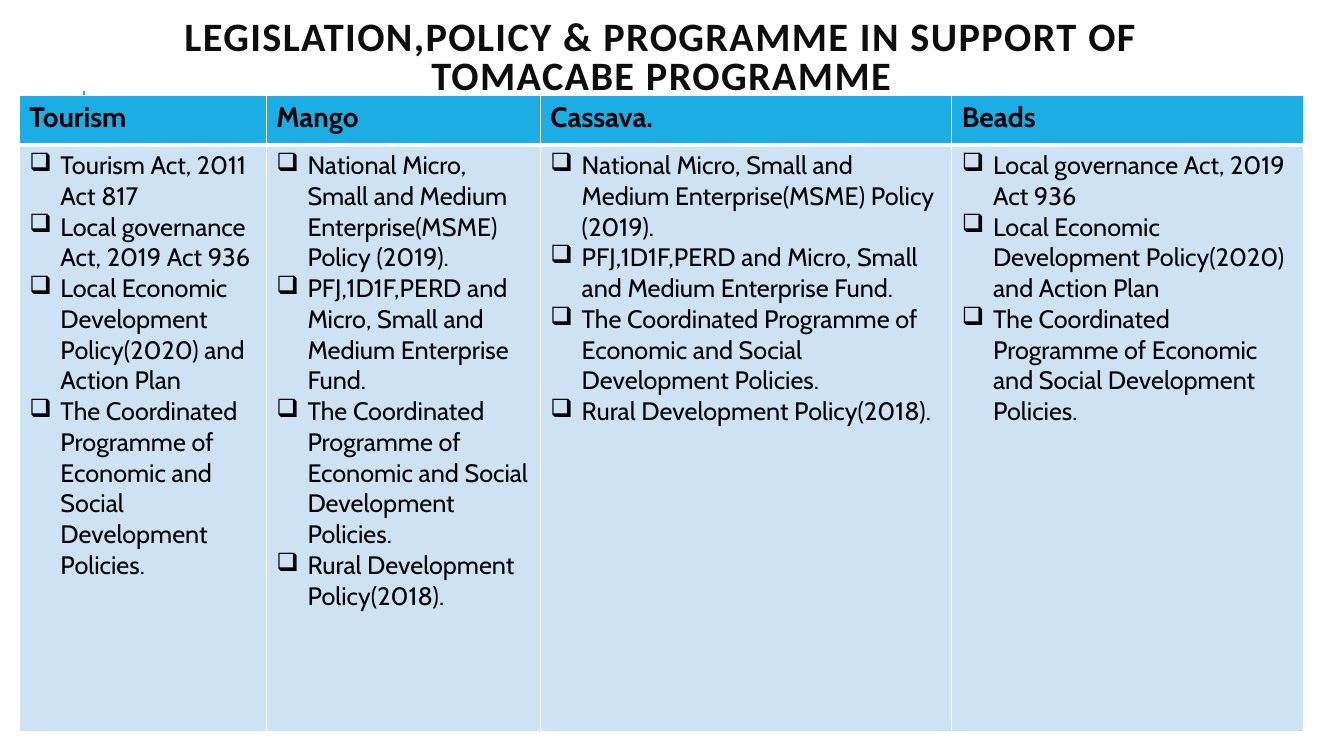
from lxml.etree import SubElement
from pptx import Presentation
from pptx.dml.color import RGBColor
from pptx.enum.shapes import MSO_CONNECTOR
from pptx.enum.text import MSO_ANCHOR, MSO_AUTO_SIZE, PP_ALIGN
from pptx.oxml import parse_xml
from pptx.oxml.ns import nsdecls, qn
from pptx.util import Inches, Pt

MSME = "National Micro, Small and Medium Enterprise(MSME) Policy (2019)."
FUND = "PFJ,1D1F,PERD and Micro, Small and Medium Enterprise Fund."
COORDINATED = "The Coordinated Programme of Economic and Social Development Policies."
RURAL = "Rural Development Policy(2018)."
GOVERNANCE = "Local governance Act, 2019 Act 936"
LOCAL_ECONOMIC = "Local Economic Development Policy(2020) and Action Plan"

SECTORS = [
    ("Tourism", 2.45, ["Tourism Act, 2011 Act 817", GOVERNANCE, LOCAL_ECONOMIC, COORDINATED]),
    ("Mango", 2.72, [MSME, FUND, COORDINATED, RURAL]),
    ("Cassava.", 4.08, [MSME, FUND, COORDINATED, RURAL]),
    ("Beads", 3.49, [GOVERNANCE, LOCAL_ECONOMIC, COORDINATED]),
]


def rgb(value):
    return RGBColor.from_string(value)


class PolicySlide:
    accent = "1CADE4"
    pale = "CDE3F5"
    ink = "000000"
    title_ink = "0D0D0D"
    grid = "FFFFFF"

    def __init__(self, presentation):
        self.slide = presentation.slides.add_slide(presentation.slide_layouts[5])

    def style(self, paragraph, font_name, size, color, bold):
        font = paragraph.font
        font.name = font_name
        font.size = Pt(size)
        font.bold = bold
        font.color.rgb = rgb(color)

    def title(self, text, left, top, width, height):
        heading = self.slide.shapes.title
        heading.left, heading.top = Inches(left), Inches(top)
        heading.width, heading.height = Inches(width), Inches(height)
        frame = heading.text_frame
        frame.text = text
        frame.word_wrap = True
        frame.auto_size = MSO_AUTO_SIZE.NONE
        frame.vertical_anchor = MSO_ANCHOR.MIDDLE
        line = frame.paragraphs[0]
        line.alignment = PP_ALIGN.CENTER
        line.line_spacing = 0.8
        self.style(line, "Calibri", 28.8, self.title_ink, True)
        line.runs[0]._r.get_or_add_rPr().set("spc", "100")

    def rule(self, x, start, end):
        rule = self.slide.shapes.add_connector(
            MSO_CONNECTOR.STRAIGHT, Inches(x), Inches(start), Inches(x), Inches(end))
        rule.line.color.rgb = rgb(self.accent)
        rule.line.width = Pt(1.5)
        SubElement(rule._element.spPr, qn("a:effectLst"))

    def borders(self, cell, bottom):
        properties = cell._tc.get_or_add_tcPr()
        for side, points in (("L", 1), ("R", 1), ("T", 1), ("B", bottom)):
            properties.append(parse_xml(
                f'<a:ln{side} {nsdecls("a")} w="{Pt(points)}"><a:solidFill>'
                f'<a:srgbClr val="{self.grid}"/></a:solidFill></a:ln{side}>'))

    def bullet(self, paragraph):
        properties = paragraph._p.get_or_add_pPr()
        properties.set("marL", str(Inches(0.31)))
        properties.set("indent", str(Inches(-0.31)))
        SubElement(properties, qn("a:buChar"), char="❑")

    def cell(self, cell, lines, size, fill, bold=False, bulleted=False, bottom=1):
        self.borders(cell, bottom)
        cell.fill.solid()
        cell.fill.fore_color.rgb = rgb(fill)
        cell.text = "\n".join(lines)
        for paragraph in cell.text_frame.paragraphs:
            if bulleted:
                self.bullet(paragraph)
            self.style(paragraph, "Cabin", size, self.ink, bold)

    def table(self, sectors, left, top, row_heights):
        width = sum(column_width for _, column_width, _ in sectors)
        grid = self.slide.shapes.add_table(
            len(row_heights), len(sectors), Inches(left), Inches(top),
            Inches(width), Inches(sum(row_heights))).table
        for row, height in zip(grid.rows, row_heights):
            row.height = Inches(height)
        for index, (sector, column_width, policies) in enumerate(sectors):
            grid.columns[index].width = Inches(column_width)
            self.cell(grid.cell(0, index), [sector], 20, self.accent, bold=True, bottom=3)
            self.cell(grid.cell(1, index), policies, 18, self.pale, bulleted=True)


def main():
    presentation = Presentation()
    presentation.slide_width = Inches(13.33)
    presentation.slide_height = Inches(7.5)
    page = PolicySlide(presentation)
    page.rule(0.83, 1.9, 0.9)
    page.title("LEGISLATION,POLICY & PROGRAMME IN SUPPORT OF TOMACABE PROGRAMME",
               0.81, 0.15, 11.5, 0.88)
    page.table(SECTORS, 0.19, 0.95, [0.49, 5.82])
    presentation.save("out.pptx")


if __name__ == "__main__":
    main()
